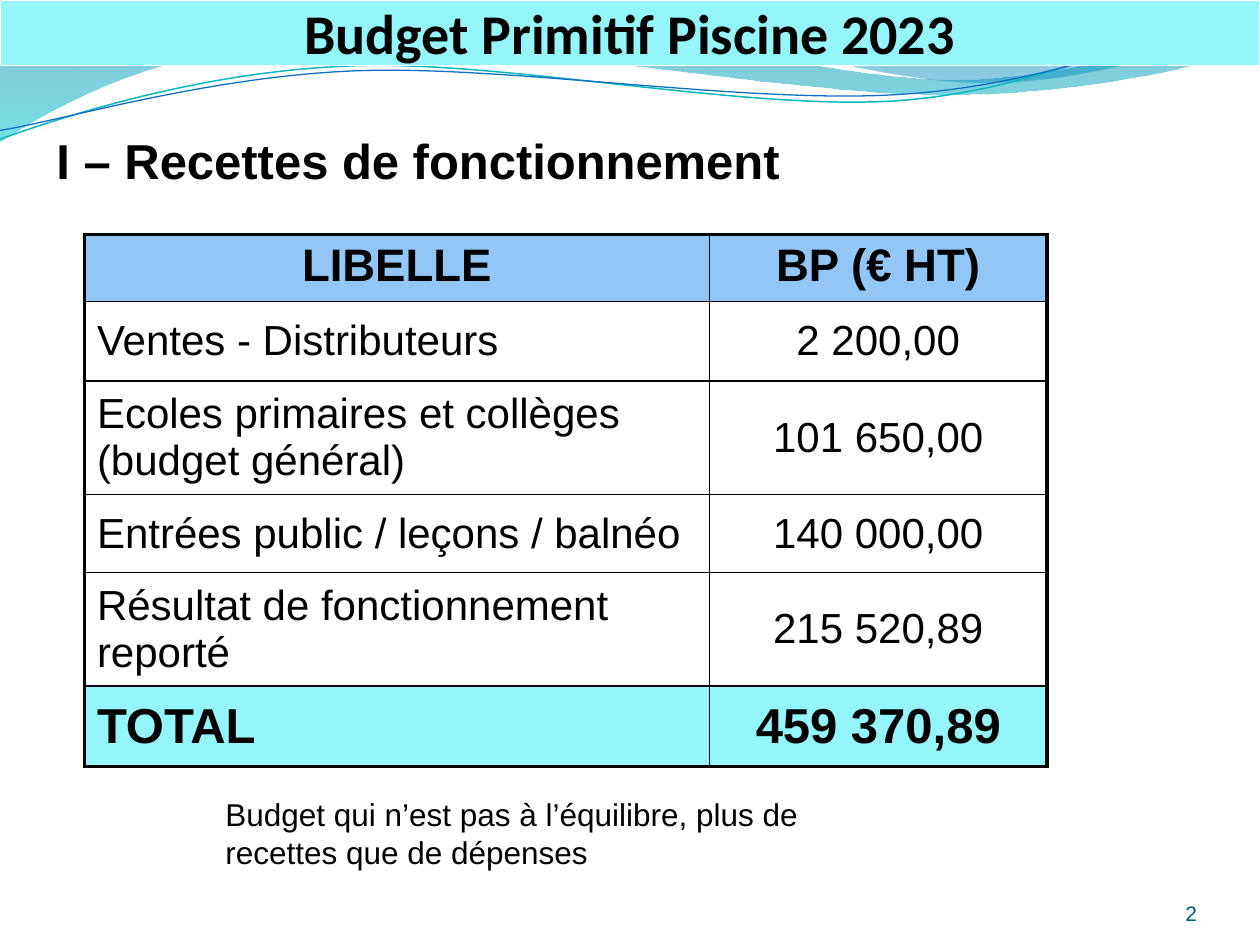
from dataclasses import dataclass
from typing import Optional

from lxml.etree import SubElement
from pptx import Presentation
from pptx.dml.color import RGBColor
from pptx.enum.shapes import MSO_SHAPE
from pptx.enum.text import MSO_ANCHOR, PP_ALIGN
from pptx.oxml.ns import qn
from pptx.util import Pt

EMU_PER_PX = 9144  # 100 px to the inch
COLORS = {
    "black": "000000", "white": "FFFFFF", "aqua": "94F5FA", "header": "91C6F7",
    "number": "045C75", "teal_line": "0AB8BF", "blue_line": "0F6FC6",
    "deep_blue": "0074A1", "cyan": "00C6CF", "teal": "00A1A9", "mid_blue": "008BBF",
}


@dataclass(frozen=True)
class Stop:
    position: float
    color: str
    opacity: int


@dataclass(frozen=True)
class Wave:
    """Each segment holds one end point, or two control points and an end point."""
    start: tuple
    segments: tuple
    stops: tuple = ()
    line: Optional[str] = None
    line_width: float = 0
    rotation: float = 0


@dataclass(frozen=True)
class Style:
    size: int
    bold: bool = False
    color: str = "black"
    font: str = "Arial"
    align: PP_ALIGN = PP_ALIGN.LEFT
    anchor: MSO_ANCHOR = MSO_ANCHOR.TOP
    insets: tuple = (10, 5, 10, 5)


@dataclass(frozen=True)
class BudgetRow:
    label: str
    amount: str
    height: int
    size: int = 24
    bold: bool = False
    fill: str = "white"
    label_align: PP_ALIGN = PP_ALIGN.LEFT
    anchor: MSO_ANCHOR = MSO_ANCHOR.MIDDLE


WAVES = (
    Wave((0, -1), (
        ((440, -1),), ((476, 17), (664, 63), (758, 63)), ((853, 63), (958, 26), (1000, 9)),
        ((1001, 36),), ((983, 44), (870, 76), (746, 75)), ((622, 75), (382, 28), (257, 34)),
        ((129, 35), (46, 83), (-1, 113))),
        stops=(Stop(0, "deep_blue", 45), Stop(1, "cyan", 55))),
    Wave((479, -1), (
        ((509, 11), (682, 62), (769, 65)), ((856, 69), (961, 32), (1000, 21)), ((1000, 0),)),
        stops=(Stop(0, "teal", 30), Stop(0.8, "mid_blue", 45))),
    Wave((-2, 87), (
        ((47, 72), (158, 41), (277, 42)), ((396, 42), (591, 93), (712, 90)),
        ((832, 87), (939, 36), (1000, 22))),
        line="teal_line", line_width=0.85, rotation=357.3),
    Wave((-2, 80), (
        ((46, 75), (164, 45), (283, 46)), ((403, 47), (596, 88), (716, 85)),
        ((835, 83), (942, 42), (1002, 30))),
        line="blue_line", line_width=0.75, rotation=357.3),
)
COLUMN_WIDTHS = (496, 268)
BUDGET = (
    BudgetRow("LIBELLE", "BP (€ HT)", 53, 26, True, "header", PP_ALIGN.CENTER, MSO_ANCHOR.TOP),
    BudgetRow("Ventes - Distributeurs", "2 200,00", 63),
    BudgetRow("Ecoles primaires et collèges (budget général)", "101 650,00", 90),
    BudgetRow("Entrées public / leçons / balnéo", "140 000,00", 62),
    BudgetRow("Résultat de fonctionnement reporté", "215 520,89", 90),
    BudgetRow("TOTAL", "459 370,89", 64, 28, True, "aqua"),
)


def px(length: int) -> int:
    return length * EMU_PER_PX


def rgb(name: str) -> RGBColor:
    return RGBColor.from_string(COLORS[name])


def bend_segments(shape, segments: tuple) -> None:
    """Turn each run of three straight steps into one cubic curve."""
    steps = iter(list(shape._element.iter(qn("a:lnTo"))))
    for segment in segments:
        step = next(steps)
        if len(segment) == 3:
            step.tag = qn("a:cubicBezTo")
            for _ in range(2):
                extra_step = next(steps)
                step.append(extra_step[0])
                extra_step.getparent().remove(extra_step)


def draw_wave(slide, wave: Wave) -> None:
    builder = slide.shapes.build_freeform(*wave.start, scale=EMU_PER_PX)
    points = [point for segment in wave.segments for point in segment]
    builder.add_line_segments(points, close=False)
    shape = builder.convert_to_shape()
    bend_segments(shape, wave.segments)
    shape.rotation = wave.rotation
    shape.shadow.inherit = False
    if wave.line:
        shape.fill.background()
        shape.line.color.rgb = rgb(wave.line)
        shape.line.width = Pt(wave.line_width)
        return
    SubElement(next(shape._element.iter(qn("a:path"))), qn("a:close"))
    shape.line.fill.background()
    shape.fill.gradient()
    shape.fill.gradient_angle = 270
    for gradient_stop, stop in zip(shape.fill.gradient_stops, wave.stops):
        gradient_stop.position = stop.position
        gradient_stop.color.rgb = rgb(stop.color)
    color_elements = shape._element.spPr.iter(qn("a:srgbClr"))
    for element, stop in zip(color_elements, wave.stops):
        SubElement(element, qn("a:alpha"), val=str(stop.opacity * 1000))


def write_paragraph(frame, text: str, style: Style) -> None:
    paragraph = frame.paragraphs[0]
    paragraph.text = text
    paragraph.alignment = style.align
    paragraph.font.name = style.font
    paragraph.font.size = Pt(style.size)
    paragraph.font.bold = style.bold
    paragraph.font.color.rgb = rgb(style.color)


def fill_frame(shape, text: str, style: Style) -> None:
    frame = shape.text_frame
    frame.word_wrap = True
    frame.vertical_anchor = style.anchor
    (frame.margin_left, frame.margin_top,
     frame.margin_right, frame.margin_bottom) = map(px, style.insets)
    write_paragraph(frame, text, style)


def draw_text(slide, box: tuple, text: str, style: Style) -> None:
    fill_frame(slide.shapes.add_textbox(*map(px, box)), text, style)


def draw_banner(slide, box: tuple, text: str, style: Style) -> None:
    banner = slide.shapes.add_shape(MSO_SHAPE.RECTANGLE, *map(px, box))
    banner.shadow.inherit = False
    banner.fill.solid()
    banner.fill.fore_color.rgb = rgb("aqua")
    banner.line.color.rgb = rgb("white")
    banner.line.width = Pt(0.75)
    fill_frame(banner, text, style)


def set_borders(cell, outer_sides: dict) -> None:
    """Thick lines on the table's outer sides, thin ones inside."""
    properties = cell._tc.get_or_add_tcPr()
    for side, is_outer in outer_sides.items():
        line = SubElement(properties, qn(f"a:ln{side}"), w=str(Pt(2.25 if is_outer else 1)))
        solid = SubElement(line, qn("a:solidFill"))
        SubElement(solid, qn("a:srgbClr"), val=COLORS["black"])


def draw_budget(slide, left: int, top: int) -> None:
    last_row, last_column = len(BUDGET) - 1, len(COLUMN_WIDTHS) - 1
    size = (sum(COLUMN_WIDTHS), sum(row.height for row in BUDGET))
    table = slide.shapes.add_table(
        len(BUDGET), len(COLUMN_WIDTHS), *map(px, (left, top, *size))).table
    table.first_row = table.horz_banding = False
    for column, width in zip(table.columns, COLUMN_WIDTHS):
        column.width = px(width)
    for i, row in enumerate(BUDGET):
        table.rows[i].height = px(row.height)
        contents = ((row.label, row.label_align), (row.amount, PP_ALIGN.CENTER))
        for j, (text, align) in enumerate(contents):
            cell = table.cell(i, j)
            set_borders(cell, {"L": j == 0, "R": j == last_column,
                               "T": i == 0, "B": i == last_row})
            cell.fill.solid()
            cell.fill.fore_color.rgb = rgb(row.fill)
            cell.vertical_anchor = row.anchor
            write_paragraph(cell.text_frame, text, Style(row.size, row.bold, align=align))


def main() -> None:
    presentation = Presentation()
    presentation.slide_width, presentation.slide_height = px(1000), px(750)
    slide = presentation.slides.add_slide(presentation.slide_layouts[6])
    for wave in WAVES:
        draw_wave(slide, wave)
    draw_text(slide, (35, 99, 900, 71), "I – Recettes de fonctionnement", Style(28, True))
    draw_budget(slide, 67, 186)
    draw_text(slide, (867, 695, 83, 40), "2", Style(
        12, color="number", align=PP_ALIGN.RIGHT, anchor=MSO_ANCHOR.BOTTOM, insets=(0, 0, 0, 0)))
    draw_banner(slide, (0, 0, 1000, 52), "Budget Primitif Piscine 2023", Style(
        32, True, font="Calibri", align=PP_ALIGN.CENTER, anchor=MSO_ANCHOR.BOTTOM,
        insets=(0, 5, 0, 0)))
    draw_text(slide, (169, 626, 480, 71),
              "Budget qui n’est pas à l’équilibre, plus de recettes que de dépenses", Style(18))
    presentation.save("out.pptx")


if __name__ == "__main__":
    main()
